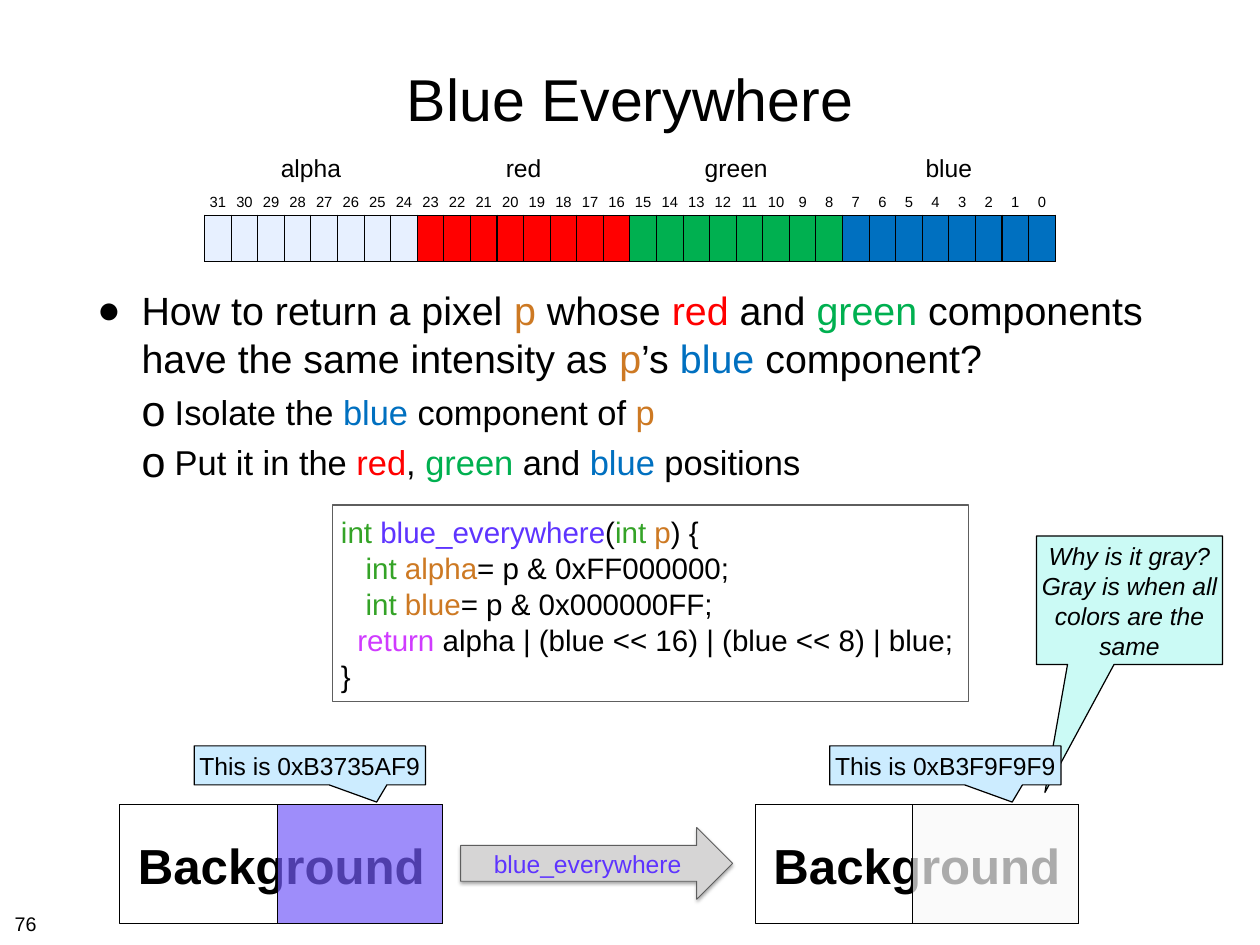
from lxml import etree
from pptx import Presentation
from pptx.dml.color import RGBColor
from pptx.enum.shapes import MSO_SHAPE
from pptx.enum.text import MSO_ANCHOR, PP_ALIGN
from pptx.oxml.ns import qn
from pptx.util import Pt

RECT, ARROW = MSO_SHAPE.RECTANGLE, MSO_SHAPE.RIGHT_ARROW
CALL = MSO_SHAPE.RECTANGULAR_CALLOUT
TOP, MID, BASE = MSO_ANCHOR.TOP, MSO_ANCHOR.MIDDLE, MSO_ANCHOR.BOTTOM
LEFT, CENTER = PP_ALIGN.LEFT, PP_ALIGN.CENTER


class Theme:
    font = "Arial"
    lead = 1.22
    # Type sizes
    title, word, body, sub, code, note, page, bit = 48, 40, 32, 28, 24, 20, 16, 12
    # Colours
    black = "000000"
    red, green, blue, pale = "FF0000", "00B050", "0070C0", "E7F0FF"
    var, kind, func, key = "CD7923", "34A327", "5E34FF", "D03BFF"
    gray, steel = "5E5E5E", "D6D5D5"
    sky, mint = "CCECFF", "CBFAF5"
    violet, white = "735AF9", "F9F9F9"


T = Theme


def write(frame, lines, size, align=LEFT, bold=False, italic=False):
    """Fill a text frame; each line is a list of (text, colour) runs."""
    for i, line in enumerate(lines):
        para = frame.paragraphs[0] if i == 0 else frame.add_paragraph()
        para.alignment = align
        para.line_spacing = Pt(round(size * T.lead, 1))
        for text, color in line:
            for j, part in enumerate(text.split("\n")):
                if j:
                    para.add_line_break()
                run = para.add_run()
                run.text = part
                font = run.font
                font.name, font.size = T.font, Pt(size)
                font.bold, font.italic = bold, italic
                font.color.rgb = RGBColor.from_string(color)


def pad(box, side, edge, anchor):
    """Set the margins and anchor of a text frame or table cell."""
    box.margin_left = box.margin_right = Pt(side)
    box.margin_top = box.margin_bottom = Pt(edge)
    box.vertical_anchor = anchor


deck = Presentation()
deck.slide_width, deck.slide_height = Pt(1024), Pt(768)
slide = deck.slides.add_slide(deck.slide_layouts[5])
shapes = slide.shapes

# Title
title = shapes.title
title.left, title.top, title.width, title.height = Pt(75), Pt(20), Pt(874), Pt(118)
pad(title.text_frame, 4, 4, MID)
write(title.text_frame, [[("Blue Everywhere", T.black)]], T.title, CENTER)

# Question and steps
body = shapes.add_textbox(Pt(75), Pt(228), Pt(874), Pt(471)).text_frame
body.word_wrap = True
pad(body, 4, 4, TOP)
ask = [("How to return a pixel ", T.black), ("p ", T.var), ("whose ", T.black),
       ("red", T.red), (" and ", T.black), ("green", T.green),
       (" components have the same intensity as ", T.black), ("p", T.var),
       ("’s ", T.black), ("blue", T.blue), (" component?", T.black)]
first = [("Isolate the ", T.black), ("blue", T.blue),
         (" component of ", T.black), ("p", T.var)]
second = [("Put it in the ", T.black), ("red", T.red), (", ", T.black),
          ("green", T.green), (" and ", T.black), ("blue", T.blue),
          (" positions", T.black)]
write(body, [ask, first, second], T.body)
steps = [(0, 36, 36, 8, "●", 100, T.body), (1, 63, 27, 7, "o", 125, T.sub),
         (1, 63, 27, 7, "o", 125, T.sub)]
for para, (level, left, hang, gap, mark, scale, size) in zip(body.paragraphs, steps):
    para.level = level
    para.space_before = Pt(gap)
    para.line_spacing = Pt(round(size * T.lead, 1))
    for run in para.runs:
        run.font.size = Pt(size)
    props = para._p.get_or_add_pPr()
    props.set("marL", str(Pt(left)))
    props.set("indent", str(-Pt(hang)))
    tint = etree.SubElement(props, qn("a:buClr"))
    etree.SubElement(tint, qn("a:srgbClr"), val=T.black)
    etree.SubElement(props, qn("a:buSzPct"), val=str(scale * 1000))
    etree.SubElement(props, qn("a:buFont"), typeface=T.font)
    etree.SubElement(props, qn("a:buChar"), char=mark)

# Bit table: channel names, bit numbers, coloured bits
bits = 32
grid = shapes.add_table(3, bits, Pt(166.3), Pt(120.3), Pt(bits * 21.6), Pt(89.4)).table
grid.first_row = grid.horz_banding = False
for col in grid.columns:
    col.width = Pt(21.6)
for row, tall in zip(grid.rows, (29, 23, 37.4)):
    row.height = Pt(tall)
bands = [("alpha", T.pale), ("red", T.red), ("green", T.green), ("blue", T.blue)]
for i in range(bits):
    name, color = bands[i // 8]
    head, count, bit = (grid.cell(r, i) for r in range(3))
    for cell, anchor in ((head, TOP), (count, BASE), (bit, TOP)):
        pad(cell, 3.6, 3.6, anchor)
    if i % 8 == 0:
        head.merge(grid.cell(0, i + 7))
        write(head.text_frame, [[(name, T.black)]], T.note, CENTER)
    write(count.text_frame, [[(str(bits - 1 - i), T.black)]], T.bit, CENTER)
    for cell, sides in ((count, "B"), (bit, "LRTB")):
        for side in sides:
            line = etree.SubElement(cell._tc.get_or_add_tcPr(), qn("a:ln" + side),
                                    w=str(Pt(1)))
            ink = etree.SubElement(line, qn("a:solidFill"))
            etree.SubElement(ink, qn("a:srgbClr"), val=T.black)
    head.fill.background()
    count.fill.background()
    bit.fill.solid()
    bit.fill.fore_color.rgb = RGBColor.from_string(color)

# Code box, before and after panels, arrow and callouts
code = [
    [("int ", T.kind), ("blue_everywhere", T.func), ("(", T.black),
     ("int ", T.kind), ("p", T.var), (") {", T.black)],
    [("int ", T.kind), ("alpha", T.var), ("= p & 0xFF000000;", T.black)],
    [("int ", T.kind), ("blue", T.var), ("= p & 0x000000FF;", T.black)],
    [("return ", T.key), ("alpha | (blue << 16) | (blue << 8) | blue;", T.black)],
    [("}", T.black)],
]
why = "Why is it gray?\nGray is when all\ncolors are the\nsame"
# kind, place, fill, edge, edge width, lines, size, margins
items = [
    (RECT, (270, 410.4, 517, 160), None, T.gray, 1, code, T.code, (7.2, 7.2)),
    (ARROW, (374.4, 672.5, 221, 58.3), T.steel, T.gray, 0.75,
     [[("blue_everywhere", T.func)]], T.note, (10, 5)),
    (CALL, (842.4, 435.6, 151.2, 104.4), T.mint, T.black, 1,
     [[(why, T.black)]], T.note, (3.6, 3.6)),
]
for x, shade, value in ((97.2, T.violet, "0xB3735AF9"), (613.7, T.white, "0xB3F9F9F9")):
    items += [
        (RECT, (x, 653.8, 262.8, 96.5), None, T.black, 0.75,
         [[("Background", T.black)]], T.word, (10, 5)),
        (RECT, (x + 128.2, 653.8, 134.6, 96.5), shade, T.black, 0.75,
         [], T.note, (10, 5)),
        (CALL, (x + 60.6, 606.2, 188, 31.7), T.sky, T.black, 1,
         [[("This is " + value, T.black)]], T.note, (3.6, 3.6)),
    ]
for kind, place, fill, edge, width, lines, size, gaps in items:
    shape = shapes.add_shape(kind, *map(Pt, place))
    shape.shadow.inherit = False
    shape.line.color.rgb = RGBColor.from_string(edge)
    shape.line.width = Pt(width)
    if fill:
        shape.fill.solid()
        shape.fill.fore_color.rgb = RGBColor.from_string(fill)
    else:
        shape.fill.background()
    frame = shape.text_frame
    frame.word_wrap = kind != CALL and lines is not code
    pad(frame, *gaps, MID)
    write(frame, lines, size, LEFT if lines is code else CENTER,
          bold=size == T.word, italic=fill == T.mint)
    if lines is code:
        for para, inset in zip(frame.paragraphs, (0, 20, 20, 13.3, 0)):
            para._p.get_or_add_pPr().set("marL", str(Pt(inset)))
    if kind == CALL:
        tip = (-0.455, 1.497) if fill == T.mint else (0.289, 0.941)
        shape.adjustments[0], shape.adjustments[1] = tip
    if fill in (T.violet, T.white):
        tint = shape._element.spPr.find(qn("a:solidFill"))[0]
        etree.SubElement(tint, qn("a:alpha"), val="69000")
    if kind == ARROW:
        effect = shape._element.spPr.find(qn("a:effectLst"))
        shade = etree.SubElement(effect, qn("a:outerShdw"), blurRad=str(Pt(3.1)),
                                 dist=str(Pt(1.8)), dir="5400000", rotWithShape="0")
        tint = etree.SubElement(shade, qn("a:srgbClr"), val=T.black)
        etree.SubElement(tint, qn("a:alpha"), val="35000")

# Page number
page = shapes.add_textbox(Pt(8), Pt(736.6), Pt(26.6), Pt(25.2)).text_frame
page.word_wrap = False
pad(page, 4, 4, TOP)
write(page, [[("76", T.black)]], T.page)

deck.save("out.pptx")
